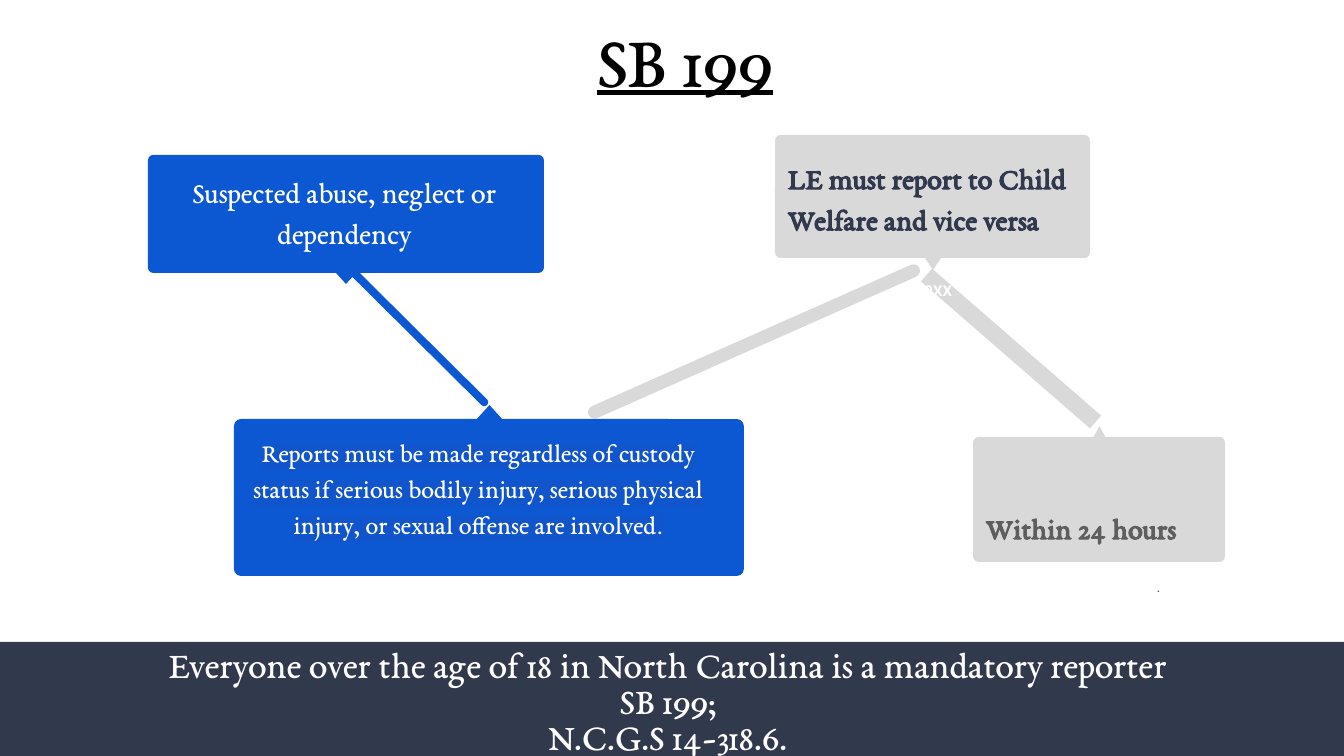
from dataclasses import dataclass

from lxml import etree
from pptx import Presentation
from pptx.dml.color import RGBColor
from pptx.enum.shapes import MSO_SHAPE
from pptx.enum.text import PP_ALIGN
from pptx.oxml.ns import qn
from pptx.util import Inches, Pt

RECT, ROUNDED, TRIANGLE = (
    MSO_SHAPE.RECTANGLE, MSO_SHAPE.ROUNDED_RECTANGLE, MSO_SHAPE.ISOSCELES_TRIANGLE)
LEFT, CENTER = PP_ALIGN.LEFT, PP_ALIGN.CENTER


@dataclass(frozen=True)
class Theme:
    blue: str = "0C58D3"
    highlight: str = "1155CC"
    gray: str = "D9D9D9"
    navy: str = "31394D"
    muted: str = "5E5E5E"
    white: str = "FFFFFF"
    black: str = "000000"
    serif: str = "EB Garamond"
    sans: str = "Roboto"
    title: int = 40
    footer: int = 20
    callout: int = 16
    detail: int = 14
    stop: int = 13
    small: int = 8


T = Theme()
WIDTH, HEIGHT, INSET = 1344, 756, 13
PX = Inches(10) / WIDTH
CORNER = 0.045

FOOTER_BAND = (0, 642, WIDTH, 114)
LINKS = [
    ((899, 340, 224, 17), 221, 0, T.gray),
    ((573, 335, 362, 13), 156.1, 0.5, T.gray),
    ((317, 331, 199, 8), 44.8, 0.5, T.blue),
]
CALLOUTS = [
    ((973, 437, 252, 125), (1093, 426, 13, 12), 0, T.gray),
    ((234, 419, 510, 157), (476, 405, 27, 15), 0, T.blue),
    ((148, 155, 396, 118), (336, 273, 20, 11), 180, T.blue),
    ((775, 135, 315, 123), (925, 258, 16, 12), 180, T.gray),
]

SERIF = dict(font=T.serif, size=T.callout, color=T.white)
FOOTER = SERIF | dict(size=T.footer)
SMALL = dict(font=T.sans, size=T.small)
TEXTS = [
    ((255, 0, 860, 118), 1, [
        (CENTER, [("SB 199", SERIF | dict(size=T.title, color=T.black, underline=True))])]),
    ((157, 155, 375, 106), 1.15, [
        (CENTER, [("Suspected abuse, neglect or dependency", SERIF)])]),
    ((234, 419, 489, 169), 1.15, [
        (CENTER, [
            ("Reports must be made regardless of custody status if serious bodily injury, "
             "serious physical injury, or sexual offense are involved",
             SERIF | dict(size=T.detail, highlight=T.highlight)),
            (".", dict(font=T.sans, size=T.stop, color=T.white, highlight=T.highlight))])]),
    ((775, 141, 352, 109), 1.15, [
        (LEFT, [("LE must report to Child Welfare and vice versa",
                 SERIF | dict(color=T.navy, bold=True))])]),
    ((870, 269, 128, 48), 1.15, [
        (CENTER, [("20XX", SMALL | dict(color=T.white, bold=True))])]),
    ((973, 491, 371, 110), 1.15, [
        (LEFT, [("Within 24 hours", SERIF | dict(color=T.muted, bold=True))]),
        (CENTER, [(".", SMALL | dict(color=T.muted))])]),
    ((0, 637, 1336, 119), 0.8, [
        (CENTER, [("Everyone over the age of 18 in North Carolina is a mandatory reporter", FOOTER)]),
        (CENTER, [("SB 199;", FOOTER)]),
        (CENTER, [("N.C.G.S 14-318.6.", FOOTER)])]),
]
PARAGRAPH_GAP = {1.15: 16}


def emu(box):
    return [round(length * PX) for length in box]


def add_filled(slide, kind, box, color, rotation=0, corner=None):
    shape = slide.shapes.add_shape(kind, *emu(box))
    shape.shadow.inherit = False
    shape.fill.solid()
    shape.fill.fore_color.rgb = RGBColor.from_string(color)
    shape.line.fill.background()
    shape.rotation = rotation
    if corner is not None:
        shape.adjustments[0] = corner


def add_run(paragraph, words, font, size, color, bold=False, underline=False, highlight=None):
    run = paragraph.add_run()
    run.text = words
    run.font.size = Pt(size)
    run.font.bold = bold
    run.font.underline = underline
    run.font.color.rgb = RGBColor.from_string(color)
    run.font.name = font
    if highlight:
        mark = etree.Element(qn("a:highlight"))
        etree.SubElement(mark, qn("a:srgbClr")).set("val", highlight)
        run.font.fill
        run._r.rPr.find(qn("a:solidFill")).addnext(mark)


def add_text(slide, box, spacing, paragraphs):
    frame = slide.shapes.add_textbox(*emu(box)).text_frame
    frame.word_wrap = True
    frame.margin_left = frame.margin_right = round(INSET * PX)
    frame.margin_top = frame.margin_bottom = round(INSET * PX)
    for index, (alignment, runs) in enumerate(paragraphs):
        paragraph = frame.add_paragraph() if index else frame.paragraphs[0]
        paragraph.alignment = alignment
        paragraph.line_spacing = float(spacing)
        if index:
            paragraph.space_before = Pt(PARAGRAPH_GAP.get(spacing, 0))
        for words, style in runs:
            add_run(paragraph, words, **style)


def main():
    deck = Presentation()
    deck.slide_width, deck.slide_height = emu((WIDTH, HEIGHT))
    slide = deck.slides.add_slide(deck.slide_layouts[6])
    add_filled(slide, RECT, FOOTER_BAND, T.navy)
    for box, angle, corner, color in LINKS:
        add_filled(slide, ROUNDED, box, color, angle, corner)
    for panel, pointer, angle, color in CALLOUTS:
        add_filled(slide, ROUNDED, panel, color, corner=CORNER)
        add_filled(slide, TRIANGLE, pointer, color, angle)
    for box, spacing, paragraphs in TEXTS:
        add_text(slide, box, spacing, paragraphs)
    deck.save("out.pptx")


if __name__ == "__main__":
    main()
